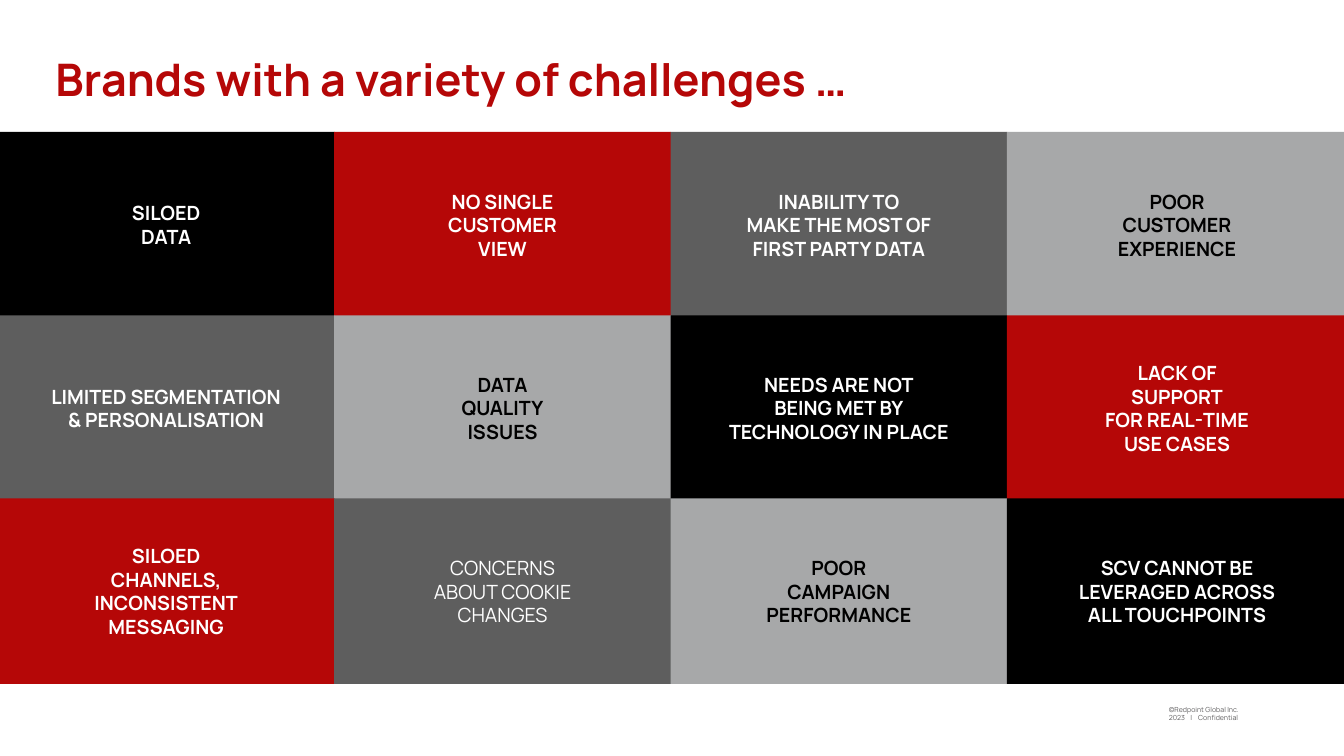
from lxml.etree import SubElement
from pptx import Presentation
from pptx.dml.color import RGBColor
from pptx.enum.shapes import MSO_SHAPE
from pptx.enum.text import MSO_ANCHOR, PP_ALIGN
from pptx.oxml.ns import qn
from pptx.util import Pt

FONT = "Manrope"
BLACK, WHITE, RED = "000000", "FFFFFF", "B50707"
DARK_GREY, LIGHT_GREY, FOOTER_GREY = "5E5E5E", "A7A8A9", "5F5E5F"

COLUMNS = 4
GRID_LEFT, GRID_TOP = -1.5, 94.3
COLUMN_STEP, ROW_STEP = 240.25, 130.9
TILE_WIDTH, TILE_HEIGHT = 240.5, 132.5

CHALLENGES = [
    ("SILOED\nDATA", BLACK),
    ("NO SINGLE\nCUSTOMER\nVIEW", RED),
    ("INABILITY TO\nMAKE THE MOST OF\nFIRST PARTY DATA", DARK_GREY),
    ("POOR\nCUSTOMER\nEXPERIENCE", LIGHT_GREY),
    ("LIMITED SEGMENTATION\n& PERSONALISATION", DARK_GREY),
    ("DATA\nQUALITY\nISSUES", LIGHT_GREY),
    ("NEEDS ARE NOT\nBEING MET BY\nTECHNOLOGY IN PLACE", BLACK),
    ("LACK OF\nSUPPORT\nFOR REAL-TIME\nUSE CASES", RED),
    ("SILOED\nCHANNELS,\nINCONSISTENT\nMESSAGING", RED),
    ("CONCERNS\nABOUT COOKIE\nCHANGES", DARK_GREY),
    ("POOR\nCAMPAIGN\nPERFORMANCE", LIGHT_GREY),
    ("SCV CANNOT BE\nLEVERAGED ACROSS\nALL TOUCHPOINTS", BLACK),
]
REGULAR_WEIGHT = {9}


def rgb(value):
    return RGBColor.from_string(value)


def format_text(tf, size, color, bold=False, align=PP_ALIGN.LEFT):
    for p in tf.paragraphs:
        p.alignment = align
        for r in p.runs:
            r.font.name = FONT
            r.font.size = Pt(size)
            r.font.bold = bold
            r.font.color.rgb = rgb(color)


def set_title(s, text):
    sp = s.shapes.title
    sp.left, sp.top, sp.width, sp.height = Pt(32.4), Pt(37.4), Pt(862), Pt(76.3)
    tf = sp.text_frame
    tf.text = text
    tf.word_wrap = True
    tf.vertical_anchor = MSO_ANCHOR.TOP
    tf.paragraphs[0].line_spacing = 0.9
    format_text(tf, 32, RED, bold=True)


def add_tile(s, index, text, fill, bold):
    row, column = divmod(index, COLUMNS)
    width = TILE_WIDTH + (2.5 if column == COLUMNS - 1 else 0)
    sp = s.shapes.add_shape(
        MSO_SHAPE.RECTANGLE,
        Pt(GRID_LEFT + column * COLUMN_STEP), Pt(GRID_TOP + row * ROW_STEP),
        Pt(width), Pt(TILE_HEIGHT))
    sp.shadow.inherit = False
    sp.fill.solid()
    sp.fill.fore_color.rgb = rgb(fill)
    sp.line.fill.background()
    tf = sp.text_frame
    tf.text = text
    tf.word_wrap = True
    tf.vertical_anchor = MSO_ANCHOR.MIDDLE
    color = BLACK if fill == LIGHT_GREY else WHITE
    format_text(tf, 14, color, bold, PP_ALIGN.CENTER)


def add_tab_stops(p, *positions):
    tabs = SubElement(p._p.get_or_add_pPr(), qn("a:tabLst"))
    for position in positions:
        SubElement(tabs, qn("a:tab"), pos=str(Pt(position)), algn="l")


def add_copyright(s):
    sp = s.shapes.add_textbox(Pt(830.9), Pt(499.7), Pt(69.1), Pt(20.2))
    tf = sp.text_frame
    tf.word_wrap = True
    tf.margin_left = tf.margin_right = tf.margin_top = tf.margin_bottom = Pt(4)
    tf.text = "©Redpoint Global Inc.\v2023\t|\tConfidential"
    add_tab_stops(tf.paragraphs[0], 15.5, 21)
    format_text(tf, 5, FOOTER_GREY)


def main():
    prs = Presentation()
    prs.slide_width, prs.slide_height = Pt(960), Pt(540)
    s = prs.slides.add_slide(prs.slide_layouts[5])
    add_copyright(s)
    set_title(s, "Brands with a variety of challenges …")
    for index, (text, fill) in enumerate(CHALLENGES):
        add_tile(s, index, text, fill, index not in REGULAR_WEIGHT)
    prs.save("out.pptx")


if __name__ == "__main__":
    main()
